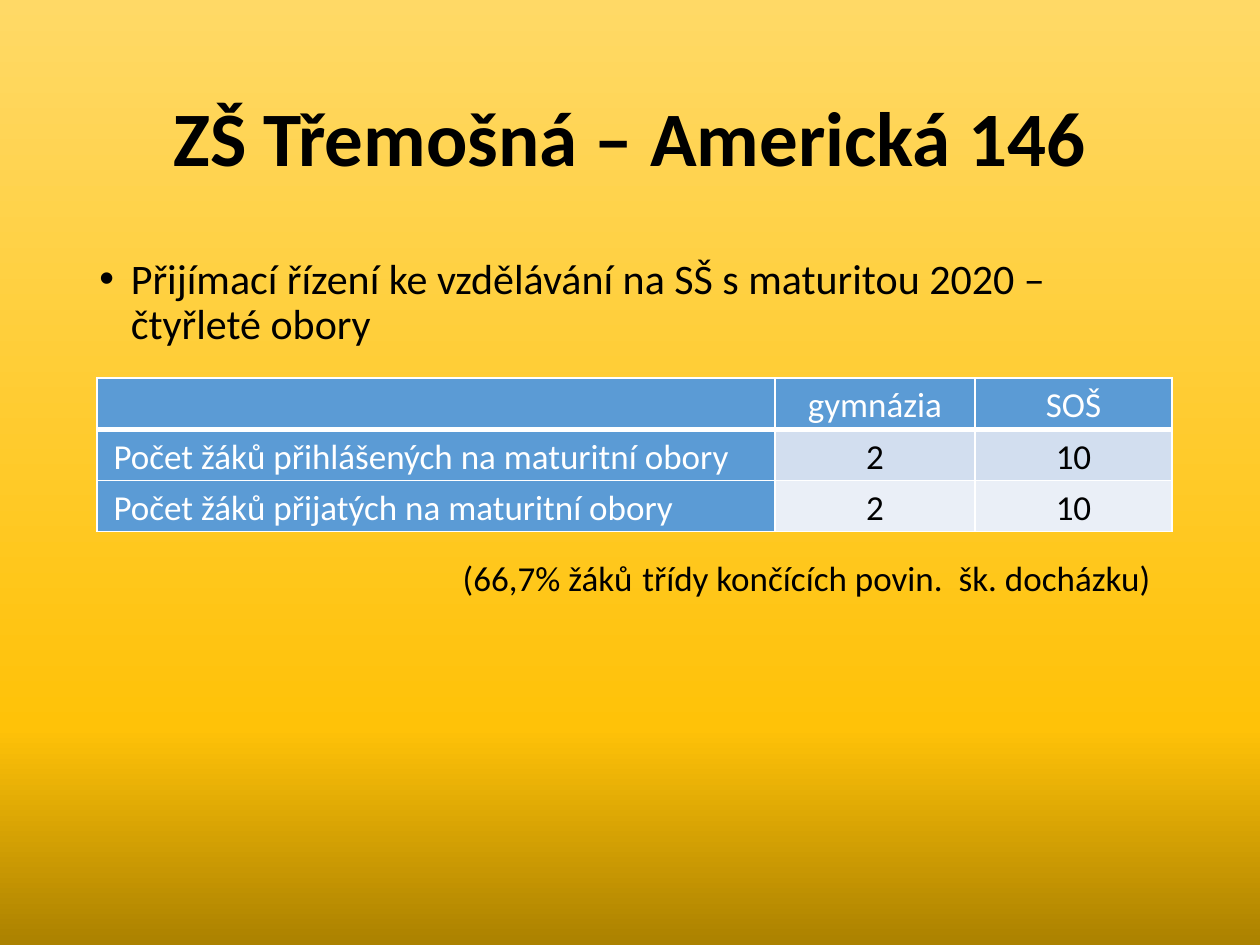
import copy

import pptx
import pptx.dml.color
import pptx.enum.text
import pptx.oxml.ns
import pptx.util
from lxml import etree

Pt = pptx.util.Pt
ALIGN = pptx.enum.text.PP_ALIGN
ANCHOR = pptx.enum.text.MSO_ANCHOR

TITLE = "ZŠ Třemošná – Americká 146"
BULLET = "Přijímací řízení ke vzdělávání na SŠ s maturitou 2020 – čtyřleté obory"
NOTE = [("(66,7% žáků", 20), (" ", 24), ("třídy končících povin.  šk. docházku)", 20)]
ROWS = [
    ("", "gymnázia", "SOŠ"),
    ("Počet žáků přihlášených na maturitní obory", "2", "10"),
    ("Počet žáků přijatých na maturitní obory", "2", "10"),
]
COL_WIDTHS = [387.4, 114.4, 112.6]
ROW_HEIGHT = 29.3
BAND_FILLS = ["D2DEEF", "EAEFF7"]
HEADER_FILL = "5B9BD5"
BLACK, WHITE = "000000", "FFFFFF"
GRADIENT = [(0, "AB8100"), (0.23, "FFC208"), (1, "FFD966")]
LEFT, WIDTH = 49.7, 620.6


def rgb(value):
    return pptx.dml.color.RGBColor.from_string(value)


def sub(parent, tag, **attrs):
    return etree.SubElement(parent, pptx.oxml.ns.qn(tag), attrs)


def style(run, size, color=BLACK, bold=False):
    font = run.font
    font.name, font.size, font.bold = "Calibri", Pt(size), bold
    font.color.rgb = rgb(color)


def set_background(s):
    fill = s.background.fill
    fill.gradient()
    fill.gradient_angle = 90
    gs_list = s.background._cSld.find(".//" + pptx.oxml.ns.qn("a:gsLst"))
    gs_list.append(copy.deepcopy(gs_list[0]))
    for stop, (position, color) in zip(fill.gradient_stops, GRADIENT):
        stop.position = position
        stop.color.rgb = rgb(color)


def add_text(s, left, top, width, height):
    tf = s.shapes.add_textbox(Pt(left), Pt(top), Pt(width), Pt(height)).text_frame
    tf.word_wrap = True
    p = tf.paragraphs[0]
    p.line_spacing = 0.9
    return tf, p


def add_borders(cell, bottom):
    tc_pr = cell._tc.get_or_add_tcPr()
    for side, width in (("L", 1), ("R", 1), ("T", 1), ("B", bottom)):
        line = sub(tc_pr, "a:ln" + side, w=str(Pt(width)))
        sub(sub(line, "a:solidFill"), "a:srgbClr", val=WHITE)


def add_results_table(s):
    table = s.shapes.add_table(
        len(ROWS), len(COL_WIDTHS), Pt(55.4), Pt(216),
        Pt(sum(COL_WIDTHS)), Pt(ROW_HEIGHT * len(ROWS))).table
    for column, width in zip(table.columns, COL_WIDTHS):
        column.width = Pt(width)
    for i, texts in enumerate(ROWS):
        table.rows[i].height = Pt(ROW_HEIGHT)
        for j, text in enumerate(texts):
            cell = table.cell(i, j)
            header = i == 0 or j == 0
            add_borders(cell, 3 if i == 0 else 1)
            cell.fill.solid()
            cell.fill.fore_color.rgb = rgb(HEADER_FILL if header else BAND_FILLS[i - 1])
            cell.margin_left = Pt(9.5 if j == 0 else 5)
            cell.margin_right = Pt(5)
            cell.margin_top = cell.margin_bottom = 0
            p = cell.text_frame.paragraphs[0]
            p.text = text
            p.line_spacing = 1.15
            p.alignment = ALIGN.LEFT if j == 0 else ALIGN.CENTER
            for r in p.runs:
                style(r, 20, WHITE if header else BLACK)


prs = pptx.Presentation()
prs.slide_width, prs.slide_height = Pt(720), Pt(540)
s = prs.slides.add_slide(prs.slide_layouts[5])
set_background(s)

title = s.shapes.title
title.left, title.top, title.width, title.height = Pt(LEFT), Pt(28.8), Pt(WIDTH), Pt(104.4)
tf = title.text_frame
tf.text = TITLE
tf.vertical_anchor = ANCHOR.MIDDLE
p = tf.paragraphs[0]
p.alignment, p.line_spacing = ALIGN.CENTER, 0.9
style(p.runs[0], 44, bold=True)

tf, p = add_text(s, LEFT, 144, WIDTH, 64)
p.text = BULLET
p_pr = p._p.get_or_add_pPr()
p_pr.set("marL", str(Pt(18)))
p_pr.set("indent", str(-Pt(18)))
sub(p_pr, "a:buFont", typeface="Arial")
sub(p_pr, "a:buChar", char="•")
style(p.runs[0], 24)

add_results_table(s)

tf, p = add_text(s, 240, 317, 417.6, 28)
tf.margin_left = tf.margin_right = tf.margin_top = tf.margin_bottom = 0
p.alignment = ALIGN.RIGHT
for text, size in NOTE:
    r = p.add_run()
    r.text = text
    style(r, size)

prs.save("out.pptx")
